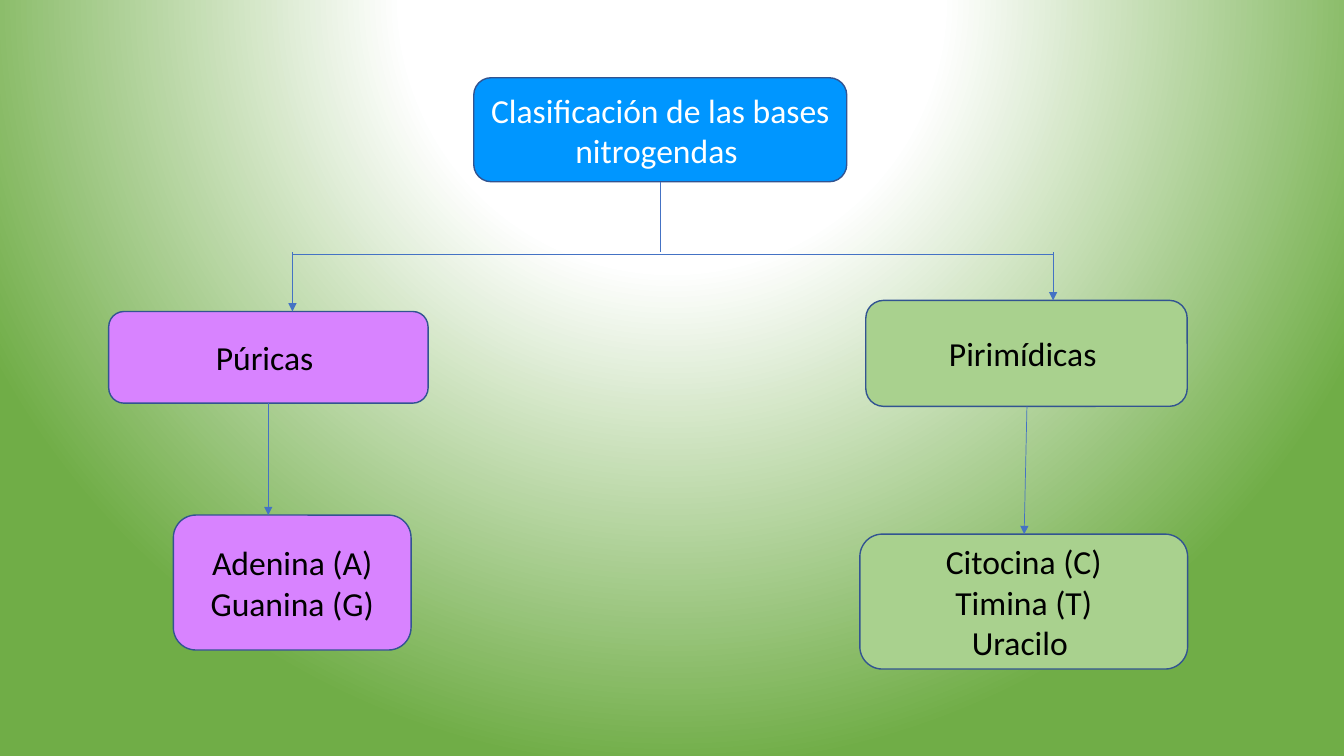
from dataclasses import dataclass

from pptx import Presentation
from pptx.dml.color import RGBColor
from pptx.enum.shapes import MSO_CONNECTOR, MSO_SHAPE
from pptx.enum.text import MSO_ANCHOR, PP_ALIGN
from pptx.oxml import parse_xml
from pptx.oxml.ns import nsdecls
from pptx.slide import Slide
from pptx.util import Cm, Pt
from lxml.etree import SubElement
from pptx.oxml.ns import qn


@dataclass(frozen=True)
class Theme:
    font: str = "Calibri"
    text_size: float = 24
    outline_width: float = 1
    link_width: float = 0.5
    white: str = "FFFFFF"
    black: str = "000000"
    blue: str = "0096FF"
    purple: str = "D883FF"
    green: str = "A9D18E"
    outline: str = "325491"
    link: str = "4472C4"
    backdrop: str = "70AD47"


@dataclass(frozen=True)
class Box:
    text: str
    left: float
    top: float
    width: float
    height: float
    fill: str
    color: str


@dataclass(frozen=True)
class Link:
    x1: float
    y1: float
    x2: float
    y2: float
    arrow: bool = True


THEME = Theme()

BOXES = [
    Box("Clasificación de las bases nitrogendas ", 11.94, 1.96, 9.4, 2.62, THEME.blue, THEME.white),
    Box("Púricas ", 2.74, 7.85, 8.05, 2.31, THEME.purple, THEME.black),
    Box("Pirimídicas ", 21.82, 7.57, 8.1, 2.67, THEME.green, THEME.black),
    Box("Adenina (A)\nGuanina (G)", 4.37, 12.98, 5.99, 3.4, THEME.purple, THEME.black),
    Box("Citocina (C)\nTimina (T)\nUracilo ", 21.67, 13.46, 8.26, 3.4, THEME.green, THEME.black),
]

LINKS = [
    Link(7.37, 6.4, 26.54, 6.4, arrow=False),
    Link(16.64, 4.58, 16.64, 6.35, arrow=False),
    Link(26.54, 6.35, 26.54, 7.57),
    Link(7.37, 6.35, 7.37, 7.85),
    Link(6.76, 10.16, 6.76, 12.98),
    Link(25.88, 10.24, 25.81, 13.46),
]


def set_background(slide: Slide) -> None:
    """Fill the slide with a circular gradient centred above its top edge."""
    stops = [(0, THEME.white), (35, THEME.white), (100, THEME.backdrop)]
    stop_xml = "".join(
        f'<a:gs pos="{pos * 1000}"><a:srgbClr val="{color}"/></a:gs>' for pos, color in stops
    )
    bg = parse_xml(
        f'<p:bg {nsdecls("p", "a")}><p:bgPr><a:gradFill rotWithShape="1">'
        f'<a:gsLst>{stop_xml}</a:gsLst><a:path path="circle">'
        '<a:fillToRect l="50000" t="-80000" r="50000" b="180000"/></a:path>'
        "</a:gradFill><a:effectLst/></p:bgPr></p:bg>"
    )
    slide.element.cSld.insert(0, bg)


def add_box(slide: Slide, box: Box) -> None:
    sp = slide.shapes.add_shape(
        MSO_SHAPE.ROUNDED_RECTANGLE,
        Cm(box.left), Cm(box.top), Cm(box.width), Cm(box.height),
    )
    sp.shadow.inherit = False
    sp.fill.solid()
    sp.fill.fore_color.rgb = RGBColor.from_string(box.fill)
    sp.line.color.rgb = RGBColor.from_string(THEME.outline)
    sp.line.width = Pt(THEME.outline_width)
    tf = sp.text_frame
    tf.word_wrap = True
    tf.vertical_anchor = MSO_ANCHOR.MIDDLE
    tf.text = box.text
    for p in tf.paragraphs:
        p.alignment = PP_ALIGN.CENTER
        for r in p.runs:
            r.font.name = THEME.font
            r.font.size = Pt(THEME.text_size)
            r.font.color.rgb = RGBColor.from_string(box.color)


def add_link(slide: Slide, link: Link) -> None:
    cxn = slide.shapes.add_connector(
        MSO_CONNECTOR.STRAIGHT, Cm(link.x1), Cm(link.y1), Cm(link.x2), Cm(link.y2)
    )
    cxn.line.color.rgb = RGBColor.from_string(THEME.link)
    cxn.line.width = Pt(THEME.link_width)
    if link.arrow:
        SubElement(cxn.line._get_or_add_ln(), qn("a:tailEnd"), type="triangle")
    SubElement(cxn.element.spPr, qn("a:effectLst"))


def main() -> None:
    prs = Presentation()
    prs.slide_width, prs.slide_height = Cm(33.87), Cm(19.05)
    slide = prs.slides.add_slide(prs.slide_layouts[6])
    set_background(slide)
    for box in BOXES:
        add_box(slide, box)
    for link in LINKS:
        add_link(slide, link)
    prs.save("out.pptx")


if __name__ == "__main__":
    main()
